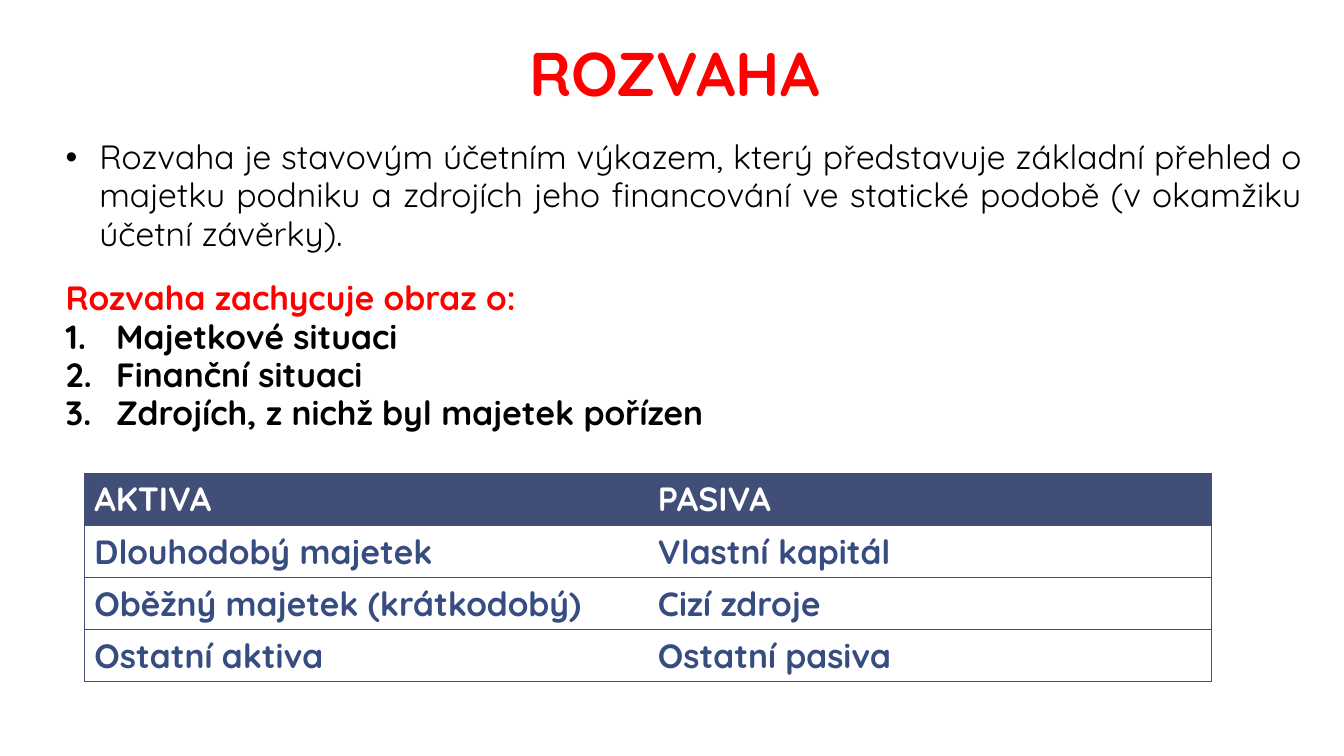
from lxml import etree
from pptx import Presentation
from pptx.dml.color import RGBColor
from pptx.enum.text import MSO_ANCHOR, MSO_AUTO_SIZE, PP_ALIGN
from pptx.oxml.ns import qn
from pptx.util import Pt

CENTER, JUSTIFY, LEFT = PP_ALIGN.CENTER, PP_ALIGN.JUSTIFY, PP_ALIGN.LEFT
TOP, BOTTOM = MSO_ANCHOR.TOP, MSO_ANCHOR.BOTTOM
NO_FIT = MSO_AUTO_SIZE.NONE
FONT = "Quicksand"
COLORS = {"red": "FF0000", "black": "000000", "white": "FFFFFF",
          "head": "414E77", "cell": "374C81"}

# Body lines: text, colour, bold, space before, hanging indent, marker
LINES = [
    ("Rozvaha je stavovým účetním výkazem, který představuje základní přehled "
     "o majetku podniku a zdrojích jeho financování ve statické podobě "
     "(v okamžiku účetní závěrky).", "black", False, 0, 24, "dot"),
    ("Rozvaha zachycuje obraz o:", "red", True, 18.7, 0, None),
    ("Majetkové situaci", "black", True, 0, 36, "number"),
    ("Finanční situaci", "black", True, 0, 36, "number"),
    ("Zdrojích, z nichž byl majetek pořízen", "black", True, 0, 36, "number"),
]
ROWS = [
    ("AKTIVA", "PASIVA"),
    ("Dlouhodobý majetek", "Vlastní kapitál"),
    ("Oběžný majetek (krátkodobý)", "Cizí zdroje"),
    ("Ostatní aktiva", "Ostatní pasiva"),
]


def style(para, size, color, bold, align):
    para.alignment = align
    font = para.font
    font.name, font.size, font.bold = FONT, Pt(size), bold
    font.color.rgb = RGBColor.from_string(COLORS[color])


def place(shape, box, anchor):
    shape.left, shape.top, shape.width, shape.height = map(Pt, box)
    frame = shape.text_frame
    frame.word_wrap = True
    frame.auto_size = NO_FIT
    frame.vertical_anchor = anchor
    frame.margin_left = frame.margin_right = Pt(9.4)
    frame.margin_top = frame.margin_bottom = Pt(5)
    return frame


def mark(para, indent, kind):
    props = para._p.get_or_add_pPr()
    props.set("marL", str(Pt(indent)))
    props.set("indent", str(-Pt(indent)))
    if kind == "dot":
        etree.SubElement(props, qn("a:buFont"), typeface="Arial")
        etree.SubElement(props, qn("a:buChar"), char="•")
    elif kind == "number":
        etree.SubElement(props, qn("a:buFont"), typeface="+mj-lt")
        etree.SubElement(props, qn("a:buAutoNum"), type="arabicPeriod")
    else:
        etree.SubElement(props, qn("a:buNone"))


def add_title(slide, box):
    frame = place(slide.shapes.title, box, BOTTOM)
    frame.text = "ROZVAHA "
    para = frame.paragraphs[0]
    style(para, 44, "red", True, CENTER)
    para.line_spacing = 0.85


def add_body(slide, box):
    frame = place(slide.placeholders[1], box, TOP)
    for i, (text, color, bold, before, indent, kind) in enumerate(LINES):
        para = frame.add_paragraph() if i else frame.paragraphs[0]
        para.text = text
        mark(para, indent, kind)
        style(para, 24, color, bold, JUSTIFY)
        para.line_spacing = 0.95
        para.space_before = Pt(before)
        para.space_after = Pt(0)


def set_edges(cell, shown):
    props = cell._tc.get_or_add_tcPr()
    for i, side in enumerate("LRTB"):
        line = etree.Element(qn("a:ln" + side), w=str(Pt(0.5)))
        if side in shown:
            fill = etree.SubElement(line, qn("a:solidFill"))
            etree.SubElement(fill, qn("a:srgbClr"), val=COLORS["head"])
        else:
            etree.SubElement(line, qn("a:noFill"))
        props.insert(i, line)


def add_grid(slide, box):
    left, top, width, height = map(Pt, box)
    table = slide.shapes.add_table(len(ROWS), 2, left, top, width, height).table
    table.horz_banding = False
    for r, row in enumerate(ROWS):
        for c, text in enumerate(row):
            cell = table.cell(r, c)
            cell.text = text
            style(cell.text_frame.paragraphs[0], 24,
                  "cell" if r else "white", True, LEFT)
            if r:
                cell.fill.background()
            else:
                cell.fill.solid()
                cell.fill.fore_color.rgb = RGBColor.from_string(COLORS["head"])
            # Only the outer sides and the row rules are drawn
            set_edges(cell, "LTB" if c == 0 else "RTB")


def main():
    deck = Presentation()
    deck.slide_width, deck.slide_height = Pt(960), Pt(540)
    slide = deck.slides.add_slide(deck.slide_layouts[1])
    add_title(slide, (88, 6, 800, 77))
    add_body(slide, (37.5, 94.3, 901.5, 391.7))
    add_grid(slide, (60.3, 338, 805, 149))
    deck.save("out.pptx")


if __name__ == "__main__":
    main()
